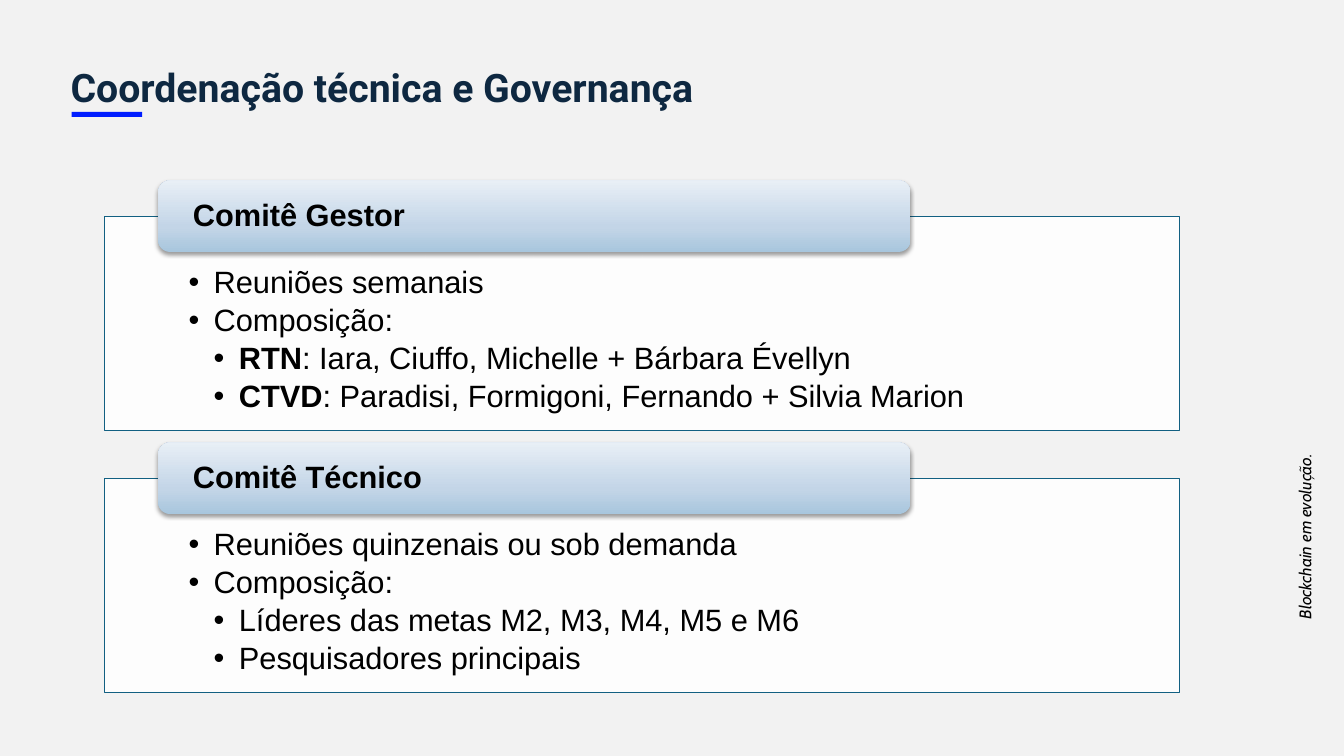
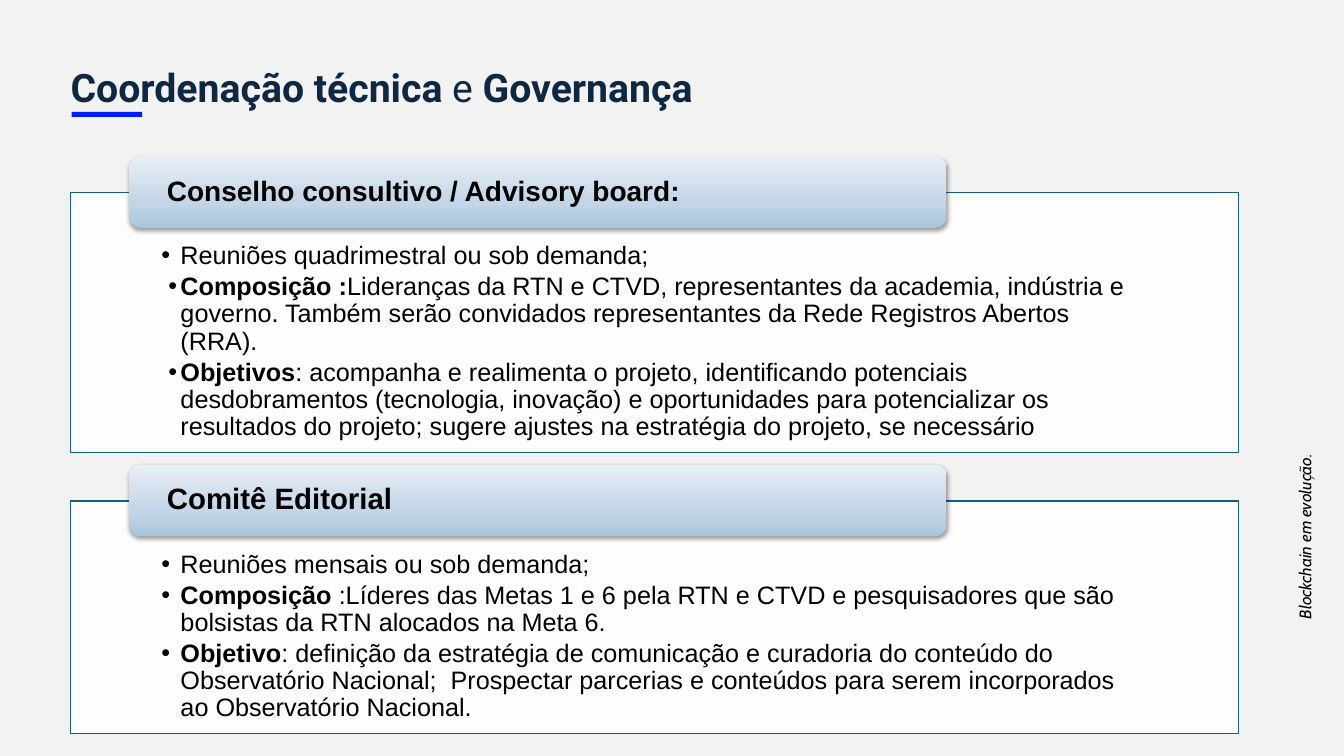
from lxml import etree
from pptx import Presentation
from pptx.dml.color import RGBColor
from pptx.enum import shapes, text
from pptx.oxml import ns
from pptx.util import Pt

PX = 9144  # 100 px to the inch

PAPER = RGBColor(0xF2, 0xF2, 0xF2)
WHITE = RGBColor(0xFF, 0xFF, 0xFF)
BLACK = RGBColor(0x00, 0x00, 0x00)
BLUE = RGBColor(0x00, 0x1D, 0xFF)
NAVY = RGBColor(0x0E, 0x28, 0x41)
TEAL = RGBColor(0x12, 0x60, 0x82)
FADE = {
    0: RGBColor(0xA8, 0xC6, 0xDD),
    35: RGBColor(0xC3, 0xD5, 0xE7),
    100: RGBColor(0xE8, 0xEF, 0xF6),
}

TITLE = {"name": "Roboto", "size": Pt(28), "color": NAVY}
NOTE = {"name": "Cabin", "size": Pt(12), "color": BLACK, "italic": True}
BODY = {"name": "Arial", "color": BLACK}


def px(*vals):
    return [round(v) * PX for v in vals]


def sub(node, tag, **attrs):
    child = etree.SubElement(node, ns.qn(tag))
    for key, val in attrs.items():
        child.set(key, str(val))
    return child


# Text helpers
def style(font, look):
    for key, val in look.items():
        if key == "color":
            font.color.rgb = val
        else:
            setattr(font, key, val)


def write(para, words, look):
    """Fill a paragraph; parts between ** marks are bold."""
    for i, part in enumerate(words.split("**")):
        if part:
            run = para.add_run()
            run.text = part
            style(run.font, {**look, "bold": i % 2 == 1})


def frame(shape, pads, anchor=text.MSO_ANCHOR.TOP):
    area = shape.text_frame
    sides = ("margin_left", "margin_top", "margin_right", "margin_bottom")
    for side, pad in zip(sides, px(*pads)):
        setattr(area, side, pad)
    area.word_wrap = True
    area.vertical_anchor = anchor
    return area


def bullet(para, left, hang):
    props = para._p.get_or_add_pPr()
    for key, val in zip(("marL", "indent"), px(left, -hang)):
        props.set(key, str(val))
    sub(sub(props, "a:buClr"), "a:srgbClr", val=BLACK)
    sub(props, "a:buFont", typeface="Arial")
    sub(props, "a:buChar", char="•")


# Shape helpers
def block(slide, kind, box, color=None):
    shape = slide.shapes.add_shape(kind, *px(*box))
    shape.shadow.inherit = False
    shape.line.fill.background()
    if color is not None:
        shape.fill.solid()
        shape.fill.fore_color.rgb = color
    return shape


def fade(shape):
    shape.fill.gradient()
    shape.fill.gradient_angle = 90
    stops = shape._element.spPr.find(".//" + ns.qn("a:gsLst"))
    for stop in list(stops):
        stops.remove(stop)
    for pos, color in FADE.items():
        stop = sub(stops, "a:gs", pos=pos * 1000)
        sub(stop, "a:srgbClr", val=color)


def shade(shape):
    effects = shape._element.spPr.find(ns.qn("a:effectLst"))
    drop = sub(effects, "a:outerShdw", blurRad=Pt(3.1), dist=Pt(1.6),
               dir=5400000, rotWithShape=0)
    sub(sub(drop, "a:srgbClr", val=BLACK), "a:alpha", val=38000)


# Parts that every slide shares
def base(deck, title):
    slide = deck.slides.add_slide(deck.slide_layouts[6])
    block(slide, shapes.MSO_SHAPE.RECTANGLE, (71, 111, 70, 5), BLUE)

    side = slide.shapes.add_textbox(*px(1197, 512, 194, 30))
    side.rotation = 270
    write(frame(side, (10, 5, 10, 5)).paragraphs[0],
          "Blockchain em evolução.", NOTE)

    head = slide.shapes.add_textbox(*px(70, 68, 1193, 33))
    para = frame(head, (0, 0, 0, 0)).paragraphs[0]
    para.line_spacing = 0.9
    write(para, title, TITLE)
    return slide


# White panel with a list, and a tab over its top edge
def panel(slide, box, name, size, items, look):
    left, top, width, height = box
    card = block(slide, shapes.MSO_SHAPE.RECTANGLE, box, WHITE)
    tint = card._element.spPr.find(".//" + ns.qn("a:srgbClr"))
    sub(tint, "a:alpha", val=90000)
    card.line.color.rgb = TEAL
    card.line.width = Pt(0.75)

    pad = width * 0.078
    area = frame(card, (pad, 50, pad, 14))
    for i, (indent, hang, words) in enumerate(items):
        para = area.add_paragraph() if i else area.paragraphs[0]
        bullet(para, indent, hang)
        para.alignment = text.PP_ALIGN.LEFT
        para.line_spacing = 0.9
        if i:
            para.space_before = Pt(look["gap"])
        write(para, words, {**BODY, "size": Pt(look["size"])})

    tab = block(slide, shapes.MSO_SHAPE.ROUNDED_RECTANGLE,
                (left + width * 0.05, top - 36, width * 0.7, 71))
    fade(tab)
    shade(tab)
    pad = width * 0.029
    para = frame(tab, (pad, 0, pad, 0), text.MSO_ANCHOR.MIDDLE).paragraphs[0]
    para.alignment = text.PP_ALIGN.LEFT
    para.line_spacing = 0.9
    write(para, f"**{name}**", {**BODY, "size": Pt(size)})


# Each panel: box, tab name, tab size, items of (indent, hang, words)
DECK = [
    ("**Coordenação técnica e Governança**", {"size": 22, "gap": 3.3}, [
        ((104, 215, 1066, 212), "Comitê Gestor", 22, [
            (25, 25, "Reuniões semanais"),
            (25, 25, "Composição:"),
            (50, 25, "**RTN**: Iara, Ciuffo, Michelle + Bárbara Évellyn"),
            (50, 25, "**CTVD**: Paradisi, Formigoni, Fernando + Silvia Marion"),
        ]),
        ((104, 475, 1066, 212), "Comitê Técnico", 22, [
            (25, 25, "Reuniões quinzenais ou sob demanda"),
            (25, 25, "Composição:"),
            (50, 25, "Líderes das metas M2, M3, M4, M5 e M6"),
            (50, 25, "Pesquisadores principais"),
        ]),
    ]),
    ("**Coordenação técnica **e **Governança**", {"size": 18, "gap": 2.7}, [
        ((70, 191, 1158, 258), "Conselho consultivo / Advisory board:", 20, [
            (19, 19, "Reuniões quadrimestral ou sob demanda;"),
            (19, 12, "**Composição :**Lideranças da RTN e CTVD, representantes "
                     "da academia, indústria e governo. Também serão convidados "
                     "representantes da Rede Registros Abertos (RRA)."),
            (19, 12, "**Objetivos**: acompanha e realimenta o projeto, "
                     "identificando potenciais desdobramentos (tecnologia, "
                     "inovação) e oportunidades para potencializar os "
                     "resultados do projeto; sugere ajustes na estratégia do "
                     "projeto, se necessário"),
        ]),
        ((70, 497, 1158, 231), "Comitê Editorial", 21, [
            (19, 19, "Reuniões mensais ou sob demanda;"),
            (19, 19, "**Composição **:Líderes das Metas 1 e 6 pela RTN e CTVD "
                     "e pesquisadores que são bolsistas da RTN alocados na "
                     "Meta 6."),
            (19, 19, "**Objetivo**: definição da estratégia de comunicação e "
                     "curadoria do conteúdo do Observatório Nacional;  "
                     "Prospectar parcerias e conteúdos para serem incorporados "
                     "ao Observatório Nacional."),
        ]),
    ]),
]


def main():
    deck = Presentation()
    deck.slide_width, deck.slide_height = px(1333, 750)
    back = deck.slide_master.background.fill
    back.solid()
    back.fore_color.rgb = PAPER
    for title, look, panels in DECK:
        slide = base(deck, title)
        for box, name, size, items in panels:
            panel(slide, box, name, size, items, look)
    deck.save("out.pptx")


if __name__ == "__main__":
    main()
